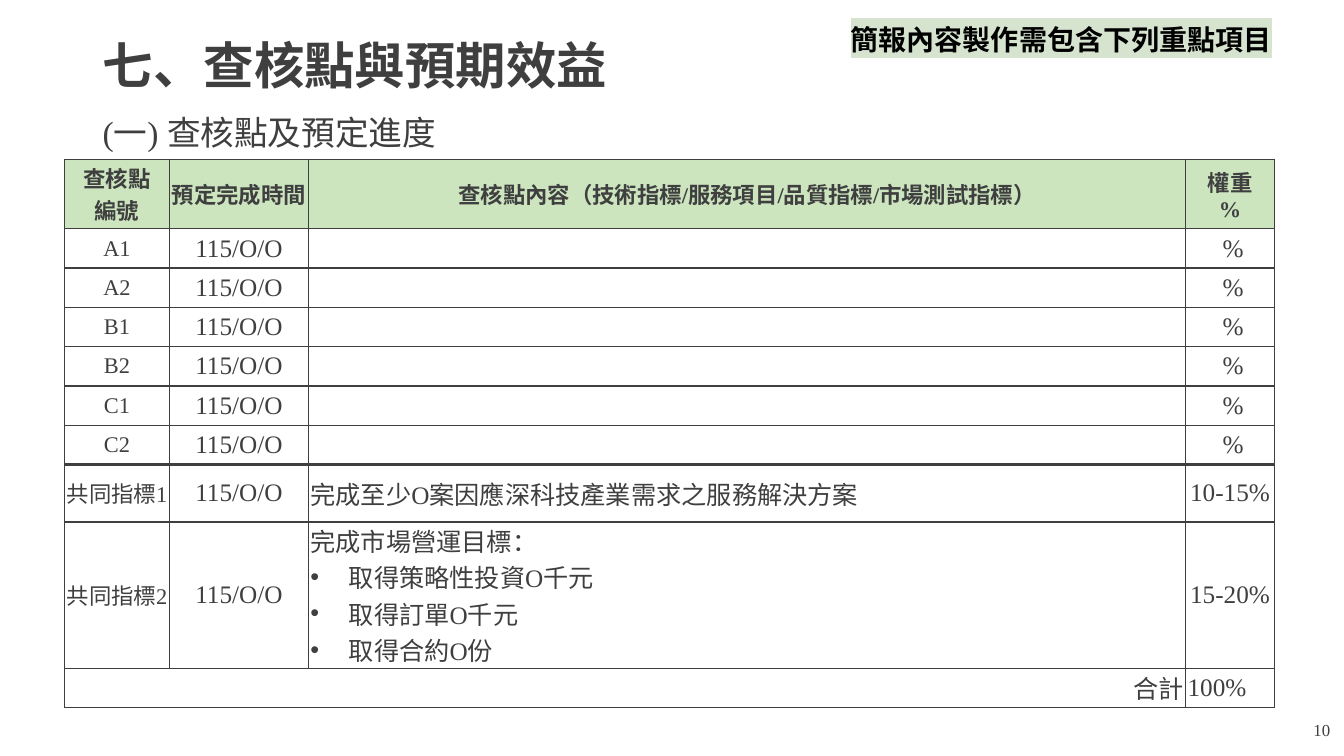
"""Build the checkpoint and expected benefits slide."""
from lxml.etree import SubElement
from pptx import Presentation
from pptx.dml.color import RGBColor
from pptx.enum.text import MSO_ANCHOR, MSO_AUTO_SIZE, PP_ALIGN
from pptx.oxml.ns import qn
from pptx.util import Inches, Pt

COLORS = {"ink": "3F3F3F", "black": "000000", "header": "CCE5BF",
          "cell": "FFFFFF", "tag": "D5E3CF"}
FONT = "Times New Roman"
TITLE = "七、查核點與預期效益"
SUBTITLE = "(一) 查核點及預定進度"
TAG = "簡報內容製作需包含下列重點項目"
PAGE_NUMBER = "10"
DUE = "115/O/O"
HEADER = ("查核點\n編號", "預定完成時間",
          "查核點內容（技術指標/服務項目/品質指標/市場測試指標）", "權重\n%")
CHECKPOINTS = ("A1", "A2", "B1", "B2", "C1", "C2")
GOALS = "完成市場營運目標：\n取得策略性投資O千元\n取得訂單O千元\n取得合約O份"
ROWS = [
    HEADER,
    *[(name, DUE, "", " %") for name in CHECKPOINTS],
    ("共同指標1", DUE, "完成至少O案因應深科技產業需求之服務解決方案", "10-15%"),
    ("共同指標2", DUE, GOALS, "15-20%"),
    ("合計", "", "", "100%"),
]
COLUMN_WIDTHS = (1.04, 1.38, 8.7, 0.88)
ROW_HEIGHTS = (0.69, *[0.39] * len(CHECKPOINTS), 0.57, 1.45, 0.39)
LAST_ROW = len(ROWS) - 1
THIN, THICK = 1, 2.25


def style(para, size, align, bold=False, color="ink"):
    para.alignment = align
    for span in para.runs:
        span.font.name = FONT
        span.font.size = Pt(size)
        span.font.bold = bold
        span.font.color.rgb = RGBColor.from_string(COLORS[color])


def add_text(page, text, place, size, align, **look):
    box = page.shapes.add_textbox(*[Inches(length) for length in place])
    box.text_frame.word_wrap = True
    box.text_frame.text = text
    para = box.text_frame.paragraphs[0]
    style(para, size, align, **look)
    return box, para


def highlight(span, color):
    mark = span.font.fill._xPr.makeelement(qn("a:highlight"), {})
    SubElement(mark, qn("a:srgbClr"), val=COLORS[color])
    span.font.fill._xPr.find(qn("a:solidFill")).addnext(mark)


def add_bullet(para):
    properties = para._p.get_or_add_pPr()
    properties.set("marL", str(Inches(0.38)))
    properties.set("indent", str(-Inches(0.38)))
    SubElement(properties, qn("a:buFont"), typeface="Arial")
    SubElement(properties, qn("a:buChar"), char="•")


def set_borders(cell, widths):
    properties = cell._tc.get_or_add_tcPr()
    for side, width in widths.items():
        line = SubElement(properties, qn(f"a:ln{side}"), w=str(Pt(width)))
        fill = SubElement(line, qn("a:solidFill"))
        SubElement(fill, qn("a:srgbClr"), val=COLORS["ink"])


def cell_align(row, column):
    if row == LAST_ROW:
        return PP_ALIGN.LEFT if column == 3 else PP_ALIGN.RIGHT
    if row > 0 and column == 2:
        return PP_ALIGN.JUSTIFY
    return PP_ALIGN.CENTER


def fill_cell(cell, text, row, column):
    cell.margin_left = cell.margin_right = Inches(0.02)
    cell.margin_top = cell.margin_bottom = 0
    cell.vertical_anchor = MSO_ANCHOR.MIDDLE
    last_checkpoint = len(CHECKPOINTS)
    set_borders(cell, {
        "L": THIN, "R": THIN,
        "T": THICK if row == last_checkpoint + 1 else THIN,
        "B": THICK if row == last_checkpoint else THIN,
    })
    cell.fill.solid()
    color = COLORS["header" if row == 0 else "cell"]
    cell.fill.fore_color.rgb = RGBColor.from_string(color)
    cell.text_frame.text = text
    small = row == 0 or (column == 0 and row < LAST_ROW)
    for index, para in enumerate(cell.text_frame.paragraphs):
        if text == GOALS and index > 0:
            add_bullet(para)
        style(para, 16 if small else 18, cell_align(row, column), row == 0)


def add_checkpoint_table(page):
    frame = page.shapes.add_table(
        len(ROWS), len(COLUMN_WIDTHS), Inches(0.64), Inches(1.58),
        Inches(sum(COLUMN_WIDTHS)), Inches(sum(ROW_HEIGHTS)))
    table = frame.table
    table.first_row = table.horz_banding = False
    for column, width in zip(table.columns, COLUMN_WIDTHS):
        column.width = Inches(width)
    for row, height in zip(table.rows, ROW_HEIGHTS):
        row.height = Inches(height)
    for row, texts in enumerate(ROWS):
        for column, text in enumerate(texts):
            fill_cell(table.cell(row, column), text, row, column)
    table.cell(LAST_ROW, 0).merge(table.cell(LAST_ROW, 2))


def add_title(page):
    title = page.shapes.title
    title.left, title.top = Inches(0.92), Inches(0.33)
    title.width, title.height = Inches(11.5), Inches(0.69)
    title.text_frame.text = TITLE
    title.text_frame.auto_size = MSO_AUTO_SIZE.NONE
    title.text_frame.vertical_anchor = MSO_ANCHOR.MIDDLE
    para = title.text_frame.paragraphs[0]
    para.line_spacing = 0.9
    style(para, 36, PP_ALIGN.JUSTIFY, bold=True)


def main():
    deck = Presentation()
    deck.slide_width, deck.slide_height = Inches(13.33), Inches(7.5)
    page = deck.slides.add_slide(deck.slide_layouts[5])
    number, _ = add_text(page, PAGE_NUMBER, (12.88, 7.08, 0.46, 0.33), 12,
                         PP_ALIGN.CENTER)
    number.text_frame.vertical_anchor = MSO_ANCHOR.MIDDLE
    add_title(page)
    add_checkpoint_table(page)
    _, subtitle = add_text(page, SUBTITLE, (0.92, 1.06, 11.5, 0.52), 24,
                           PP_ALIGN.JUSTIFY)
    subtitle.space_after = Pt(6)
    _, tag = add_text(page, TAG, (7.83, 0.17, 5.39, 0.44), 20,
                      PP_ALIGN.CENTER, bold=True, color="black")
    highlight(tag.runs[0], "tag")
    deck.save("out.pptx")


if __name__ == "__main__":
    main()
